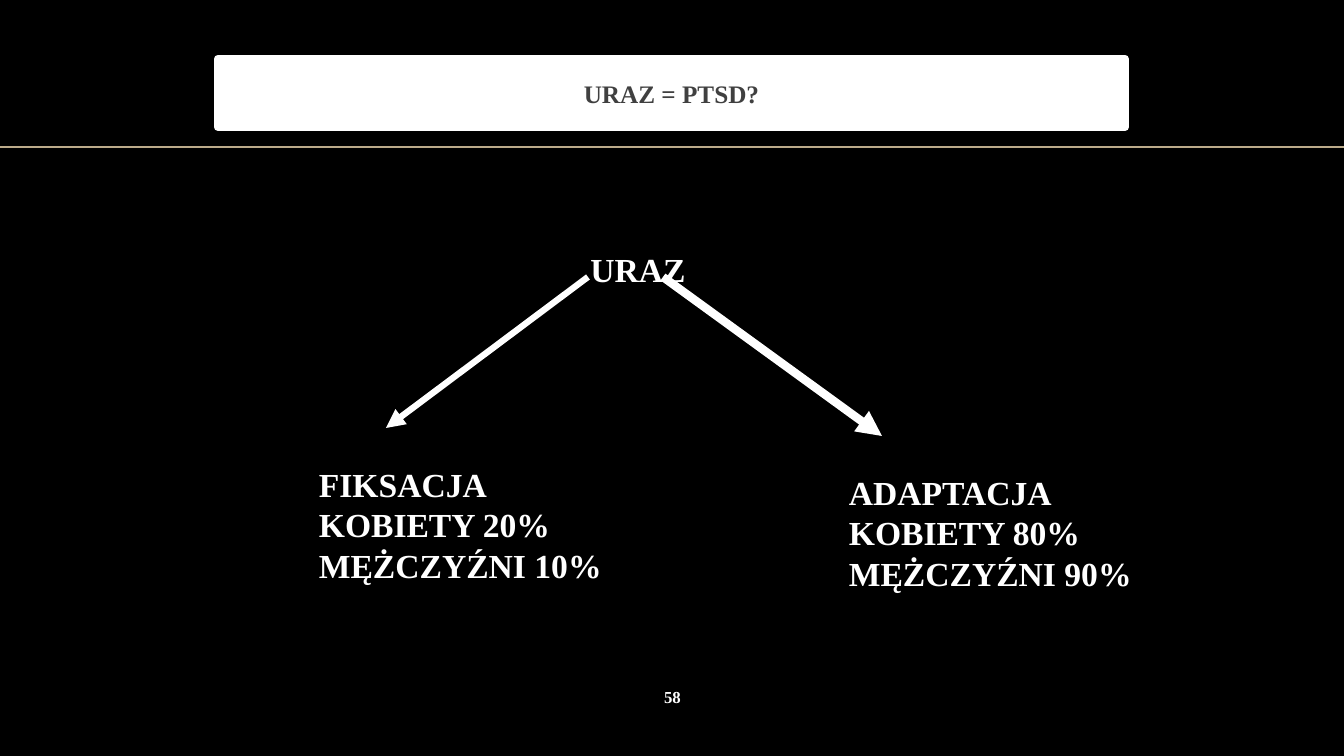
from lxml.etree import SubElement
from pptx import Presentation
from pptx.dml.color import RGBColor
from pptx.enum.shapes import MSO_CONNECTOR as CONN, MSO_SHAPE as SHAPE
from pptx.enum.text import MSO_ANCHOR as ANCHOR, MSO_AUTO_SIZE as FIT, PP_ALIGN as ALIGN
from pptx.oxml.ns import qn
from pptx.util import Emu, Pt


def px(n):
    return Emu(round(n * 914400 / 100.8))


def rgb(value):
    return RGBColor.from_string(value)


class Deck:
    font = "Times New Roman"
    white = "FFFFFF"

    def __init__(self, width, height, background):
        self.prs = Presentation()
        self.prs.slide_width, self.prs.slide_height = px(width), px(height)
        self.s = self.prs.slides.add_slide(self.prs.slide_layouts[6])
        fill = self.s.background.fill
        fill.solid()
        fill.fore_color.rgb = rgb(background)

    def set_text(self, tf, text, size, color, align):
        tf.text = text
        for p in tf.paragraphs:
            p.alignment = align
            for r in p.runs:
                r.font.name = self.font
                r.font.size = Pt(size)
                r.font.bold = True
                r.font.color.rgb = rgb(color)

    def title(self, text, x, y, w, h):
        sp = self.s.shapes.add_shape(SHAPE.RECTANGLE, px(x), px(y), px(w), px(h))
        sp.shadow.inherit = False
        sp.fill.solid()
        sp.fill.fore_color.rgb = rgb(self.white)
        sp.line.color.rgb = rgb(self.white)
        sp.line.width = Pt(6)
        tf = sp.text_frame
        tf.vertical_anchor = ANCHOR.MIDDLE
        self.set_text(tf, text, 18, "404040", ALIGN.CENTER)
        tf.paragraphs[0].space_before = Pt(4)

    def label(self, text, x, y, w, h, align=ALIGN.LEFT):
        tf = self.s.shapes.add_textbox(px(x), px(y), px(w), px(h)).text_frame
        tf.word_wrap = False
        tf.auto_size = FIT.SHAPE_TO_FIT_TEXT
        self.set_text(tf, text, 24, self.white, align)

    def page_number(self, text, x, y, w, h):
        tf = self.s.shapes.add_textbox(px(x), px(y), px(w), px(h)).text_frame
        tf.word_wrap = True
        tf.vertical_anchor = ANCHOR.MIDDLE
        tf.margin_left = tf.margin_right = tf.margin_top = tf.margin_bottom = 0
        self.set_text(tf, text, 12, self.white, ALIGN.CENTER)

    def line(self, x1, y1, x2, y2, color, width, arrow=False):
        c = self.s.shapes.add_connector(CONN.STRAIGHT, px(x1), px(y1), px(x2), px(y2))
        c.line.color.rgb = rgb(color)
        c.line.width = Pt(width)
        spPr = c._element.spPr
        if arrow:
            SubElement(spPr.find(qn("a:ln")), qn("a:tailEnd"), type="triangle")
        SubElement(spPr, qn("a:effectLst"))


def main():
    deck = Deck(1344, 756, "000000")
    deck.line(0, 147, 1344, 147, "BBAA8A", 1)
    deck.title("URAZ = PTSD?", 218, 59, 907, 68)
    deck.page_number("58", 594, 680, 157, 33)
    deck.label("URAZ", 580, 244, 116, 50, ALIGN.CENTER)
    deck.line(588, 277, 386, 428, deck.white, 4.5, arrow=True)
    deck.label("FIKSACJA\nKOBIETY 20%\nMĘŻCZYŹNI 10%", 309, 459, 306, 132)
    deck.line(663, 277, 882, 436, deck.white, 6, arrow=True)
    deck.label("ADAPTACJA\nKOBIETY 80%\nMĘŻCZYŹNI 90%", 839, 467, 306, 132)
    deck.prs.save("out.pptx")


if __name__ == "__main__":
    main()
